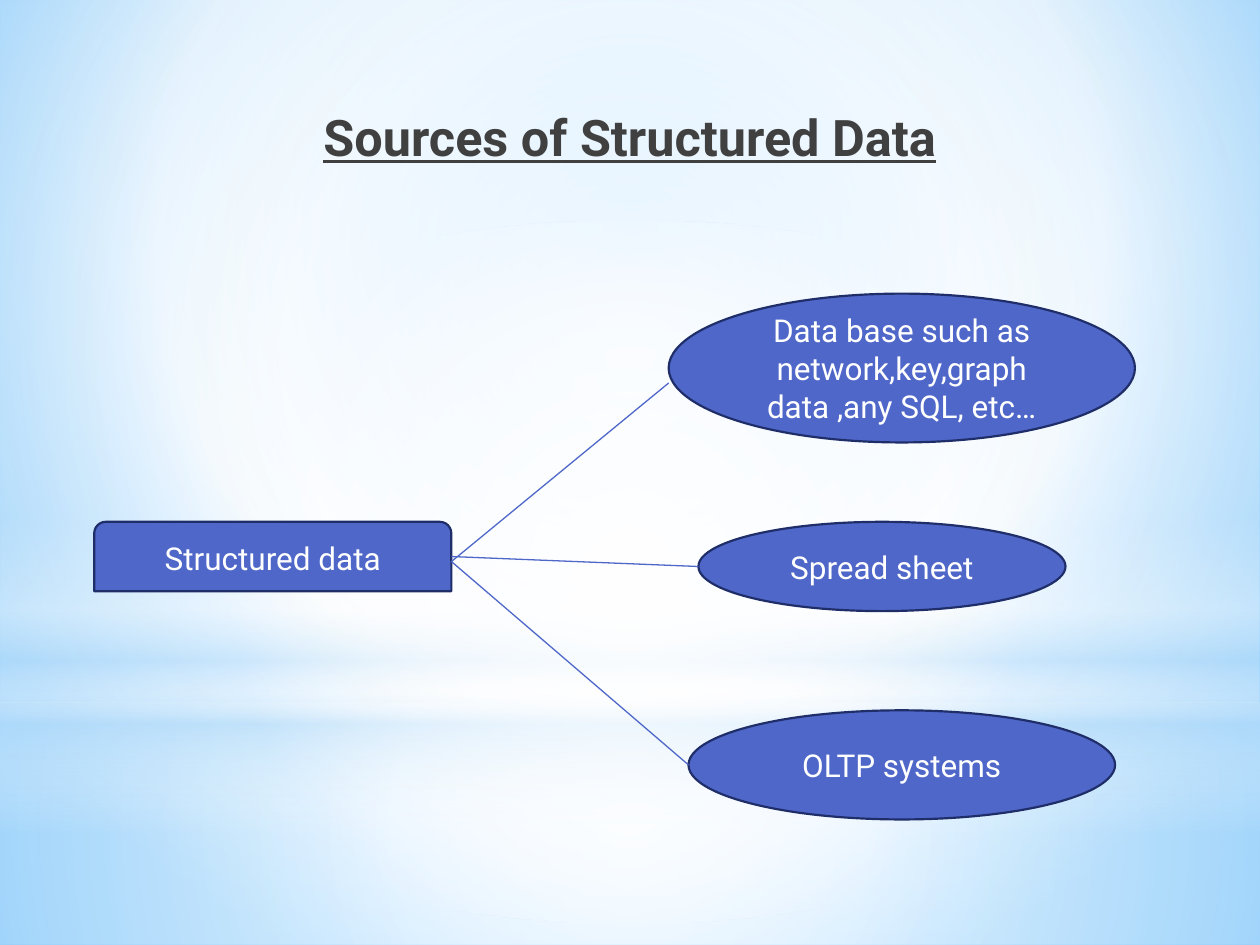
import lxml.etree
import pptx
import pptx.dml.color
import pptx.enum.shapes
import pptx.enum.text
import pptx.oxml
import pptx.oxml.ns
import pptx.util

Cm = pptx.util.Cm
SHAPE = pptx.enum.shapes.MSO_SHAPE
qn = pptx.oxml.ns.qn
WIDTH, HEIGHT = 25.4, 19.05
BLUE, NAVY = "4E67C8", "1F2E69"
CENTRE = (50, 50, 50, 50)


def rgb(value):
    return pptx.dml.color.RGBColor.from_string(value)


def set_gradient(parent, stops, focus=None):
    grad = pptx.oxml.parse_xml(
        f'<a:gradFill {pptx.oxml.ns.nsdecls("a")} rotWithShape="1"><a:gsLst/></a:gradFill>')
    for pos, color, alpha in stops:
        gs = lxml.etree.SubElement(grad[0], qn("a:gs"), pos=str(pos * 1000))
        clr = lxml.etree.SubElement(gs, qn("a:srgbClr"), val=color)
        if alpha < 100:
            lxml.etree.SubElement(clr, qn("a:alpha"), val=str(alpha * 1000))
    if focus:
        path = lxml.etree.SubElement(grad, qn("a:path"), path="circle")
        sides = {k: str(v * 1000) for k, v in zip("ltrb", focus)}
        lxml.etree.SubElement(path, qn("a:fillToRect"), **sides)
    else:
        lxml.etree.SubElement(grad, qn("a:lin"), ang="5400000", scaled="0")
    blank = next(parent.iter(qn("a:noFill")))
    blank.getparent().replace(blank, grad)


def add_glow(s, kind, box, stops, focus=None):
    sp = s.shapes.add_shape(kind, *map(Cm, box))
    sp.shadow.inherit = False
    sp.fill.background()
    set_gradient(sp._element, stops, focus)
    sp.line.fill.background()


def add_backdrop(s, box):
    s.background.fill.background()
    set_gradient(s._element, [(0, "9ED5FF", 100), (60, "FFFFFF", 100),
                              (100, "5BB9FF", 100)], (20, 10, 20, 60))
    x, y, w, h = box
    horizon = 14.17
    add_glow(s, SHAPE.RECTANGLE, (x, y + horizon, w, h - horizon),
             [(0, "FFFFFF", 91), (37, "FFFFFF", 76), (100, "B4DCFA", 79)], CENTRE)
    add_glow(s, SHAPE.RECTANGLE, (x, y, w, horizon),
             [(0, "FFFFFF", 89), (48, "FFFFFF", 62), (100, "B4DCFA", 79)], CENTRE)
    add_glow(s, SHAPE.RECTANGLE, (x, y + 10.46, w, 6.35),
             [(0, "FFFFFF", 0), (29, "FFFFFF", 30), (45, "B4DCFA", 40),
              (55, "FFFFFF", 26), (65, "B4DCFA", 60), (100, "FFFFFF", 0)])
    add_glow(s, SHAPE.OVAL, (x, y + 4.45, w, horizon),
             [(0, "FFFFFF", 100), (56, "FFFFFF", 0)], CENTRE)


def write(sp, text, color, formats):
    tf = sp.text_frame
    tf.word_wrap = True
    tf.vertical_anchor = pptx.enum.text.MSO_ANCHOR.MIDDLE
    p = tf.paragraphs[0]
    p.alignment = pptx.enum.text.PP_ALIGN.CENTER
    r = p.add_run()
    r.text = text
    r.font.color.rgb = rgb(color)
    for name, value in formats.items():
        setattr(r.font, name, value)


def add_title(s, box, text):
    sp = s.shapes.add_textbox(*map(Cm, box))
    write(sp, text, "404040", {"name": "Roboto", "size": pptx.util.Pt(28.8),
                               "bold": True, "underline": True})


def add_node(s, kind, box, text):
    sp = s.shapes.add_shape(kind, *map(Cm, box))
    sp.shadow.inherit = False
    sp.fill.solid()
    sp.fill.fore_color.rgb = rgb(BLUE)
    sp.line.color.rgb = rgb(NAVY)
    sp.line.width = pptx.util.Pt(1.25)
    write(sp, text, "FFFFFF", {"name": "Roboto", "size": pptx.util.Pt(18)})


def add_link(s, start, end):
    line = s.shapes.add_connector(pptx.enum.shapes.MSO_CONNECTOR.STRAIGHT,
                                  *map(Cm, start + end))
    line.line.color.rgb = rgb(BLUE)
    line.line.width = pptx.util.Pt(0.75)
    lxml.etree.SubElement(line._element.spPr, qn("a:effectLst"))


def add_diagram(s, box):
    x, y, w, h = box
    root_w, root_h, root_y = 7.2, 1.4, y + 4.6
    add_node(s, SHAPE.ROUND_2_SAME_RECTANGLE, (x, root_y, root_w, root_h),
             "Structured data")
    sources = [
        ("Data base such as network,key,graph data ,any SQL, etc…",
         (11.58, 0, 9.4, 3), 1.8, 0.8),
        ("Spread sheet", (12.18, 4.6, 7.4, 1.8), 0.9, 0.7),
        ("OLTP systems", (11.98, 8.4, 8.6, 2.2), 1.1, 0.8),
    ]
    for text, (dx, dy, sw, sh), end_dy, start_dy in sources:
        add_node(s, SHAPE.OVAL, (x + dx, y + dy, sw, sh), text)
        add_link(s, (x + root_w, root_y + start_dy), (x + dx, y + dy + end_dy))


def main():
    prs = pptx.Presentation()
    prs.slide_width, prs.slide_height = Cm(WIDTH), Cm(HEIGHT)
    s = prs.slides.add_slide(prs.slide_layouts[6])
    add_backdrop(s, (0, 0, WIDTH, HEIGHT))
    add_title(s, (1.27, 1.96, 22.86, 1.57), "Sources of Structured Data")
    add_diagram(s, (1.9, 5.92, 20.98, 10.6))
    prs.save("out.pptx")


if __name__ == "__main__":
    main()
